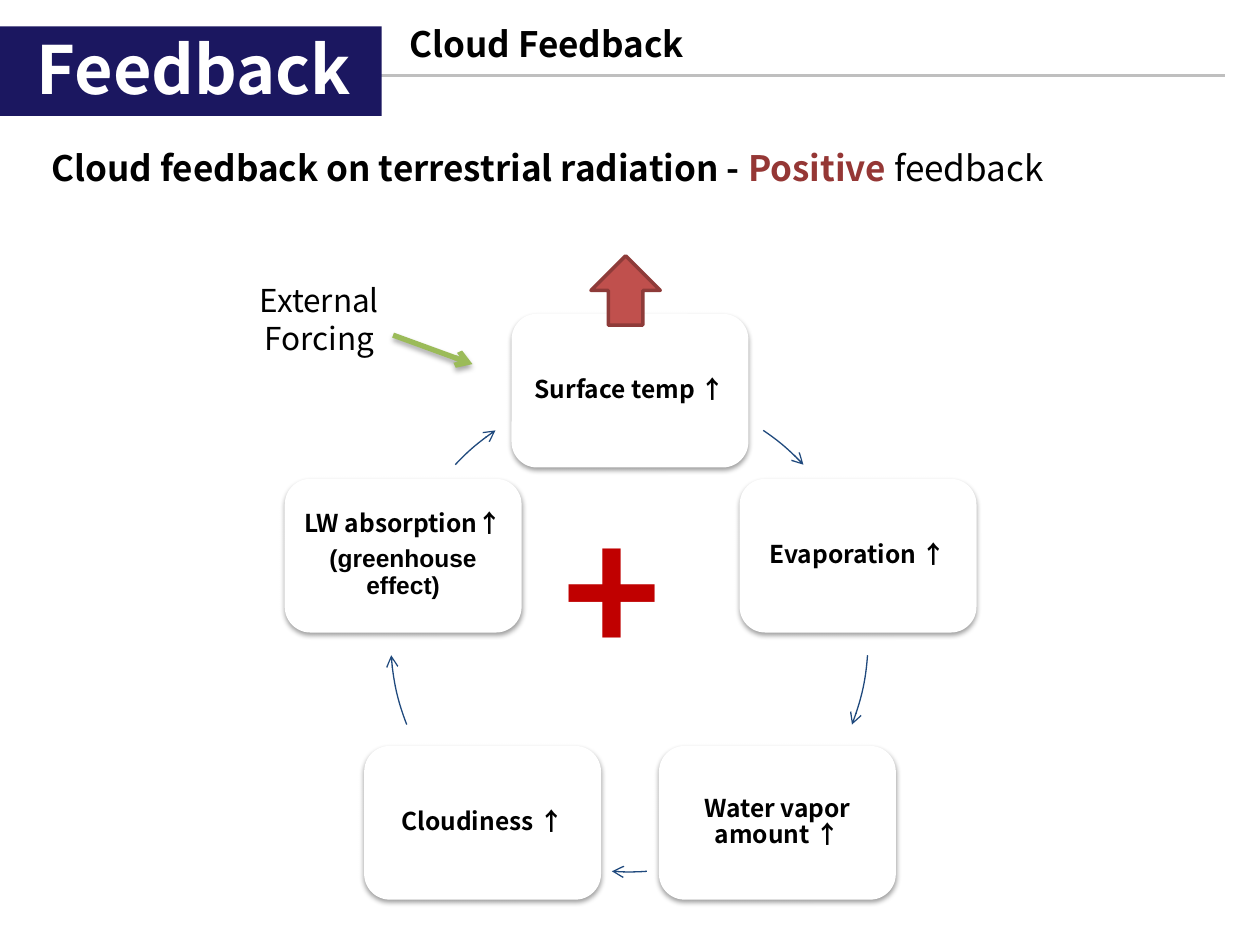
"""Build the cloud feedback cycle slide."""
from lxml.etree import SubElement
from pptx import Presentation
from pptx.dml.color import RGBColor
from pptx.enum.shapes import MSO_CONNECTOR, MSO_SHAPE
from pptx.enum.text import MSO_ANCHOR, PP_ALIGN
from pptx.oxml.ns import qn
from pptx.util import Inches, Pt

BLACK = RGBColor(0x00, 0x00, 0x00)
WHITE = RGBColor(0xFF, 0xFF, 0xFF)
NAVY = RGBColor(0x1B, 0x17, 0x60)
GREY = RGBColor(0xBF, 0xBF, 0xBF)
BLUE = RGBColor(0x1F, 0x49, 0x7D)
GREEN = RGBColor(0x9B, 0xBB, 0x59)
BRICK = RGBColor(0xC0, 0x50, 0x4D)
DARK_BRICK = RGBColor(0x8E, 0x3B, 0x39)
DARK_RED = RGBColor(0x95, 0x37, 0x35)
RED = RGBColor(0xC0, 0x00, 0x00)
FONT = "Noto Sans CJK KR"


class SlideBuilder:
    """Hold the text style and the current slide."""

    def __init__(self, page, font):
        self.page = page
        self.font = font

    def span(self, para, text, size, color=BLACK, bold=True, font=None):
        span = para.add_run()
        span.text = text
        span.font.size = Pt(size)
        span.font.bold = bold
        span.font.color.rgb = color
        span.font.name = font or self.font
        properties = span.font._element
        SubElement(properties, qn("a:ea"), typeface=font or self.font)
        return span

    def frame(self, box, margins=(0.1, 0.05), anchor=MSO_ANCHOR.TOP):
        frame = box.text_frame
        frame.word_wrap = True
        frame.vertical_anchor = anchor
        frame.margin_left = frame.margin_right = Inches(margins[0])
        frame.margin_top = frame.margin_bottom = Inches(margins[1])
        return frame

    def title(self, text, left, top, width, height):
        box = self.page.shapes.title
        box.left, box.top = Inches(left), Inches(top)
        box.width, box.height = Inches(width), Inches(height)
        para = self.frame(box).paragraphs[0]
        para.alignment = PP_ALIGN.LEFT
        self.span(para, text, 20)

    def text(self, lines, left, top, width, height, align=PP_ALIGN.LEFT):
        box = self.page.shapes.add_textbox(
            Inches(left), Inches(top), Inches(width), Inches(height))
        frame = self.frame(box)
        for index, spans in enumerate(lines):
            para = frame.paragraphs[0] if index == 0 else frame.add_paragraph()
            para.alignment = align
            for span in spans:
                self.span(para, *span)
        return box

    def shape(self, kind, left, top, width, height, fill=None, line=None, weight=1):
        shape = self.page.shapes.add_shape(
            kind, Inches(left), Inches(top), Inches(width), Inches(height))
        shape.shadow.inherit = False
        if fill is None:
            shape.fill.background()
        else:
            shape.fill.solid()
            shape.fill.fore_color.rgb = fill
        if line is None:
            shape.line.fill.background()
        else:
            shape.line.color.rgb = line
            shape.line.width = Pt(weight)
        return shape

    def shadow(self, effects, alpha, distance):
        outer = SubElement(
            effects, qn("a:outerShdw"), blurRad=str(Pt(3.1)),
            dist=str(Pt(distance)), dir="5400000", rotWithShape="0")
        color = SubElement(outer, qn("a:srgbClr"), val=str(BLACK))
        SubElement(color, qn("a:alpha"), val=str(alpha * 1000))

    def arrowhead(self, line_owner):
        outline = line_owner.line._get_or_add_ln()
        SubElement(outline, qn("a:tailEnd"), type="arrow")

    def node(self, lines, center_x, center_y, width=1.88, height=1.22):
        box = self.shape(
            MSO_SHAPE.ROUNDED_RECTANGLE, center_x - width / 2,
            center_y - height / 2, width, height, WHITE)
        self.shadow(box._element.spPr.find(qn("a:effectLst")), 38, 1.6)
        frame = self.frame(box, (0.06, 0.06), MSO_ANCHOR.MIDDLE)
        for index, (text, font) in enumerate(lines):
            para = frame.paragraphs[0] if index == 0 else frame.add_paragraph()
            para.alignment = PP_ALIGN.CENTER
            para.line_spacing = 0.9
            para.space_after = Pt(5)
            self.span(para, text, 14, font=font)

    def arc(self, start, end, top, left=3.1, diameter=3.79):
        arc = self.shape(
            MSO_SHAPE.ARC, left, top, diameter, diameter, line=BLUE, weight=0.75)
        for index, degrees in enumerate((start, end)):
            arc.adjustments[index] = (degrees - 90) % 360 * 0.6
        self.arrowhead(arc)

    def line(self, start, end, color, weight, arrow=False):
        line = self.page.shapes.add_connector(
            MSO_CONNECTOR.STRAIGHT, *(Inches(value) for value in start + end))
        line.line.color.rgb = color
        line.line.width = Pt(weight)
        effects = SubElement(line._element.spPr, qn("a:effectLst"))
        if arrow:
            self.arrowhead(line)
            self.shadow(effects, 35, 1.8)


def main():
    deck = Presentation()
    deck.slide_width, deck.slide_height = Inches(10), Inches(7.5)
    builder = SlideBuilder(deck.slides.add_slide(deck.slide_layouts[5]), FONT)

    builder.line((2.64, 0.6), (9.72, 0.6), GREY, 1.5)
    builder.title("Cloud Feedback", 3.15, 0.13, 6.14, 0.43)
    builder.shape(MSO_SHAPE.RECTANGLE, 0, 0.21, 3.03, 0.71, NAVY)
    builder.text([[("Feedback", 38, WHITE)]], 0.14, 0.17, 2.8, 0.73, PP_ALIGN.CENTER)
    builder.text([[
        ("Cloud feedback on terrestrial radiation - ", 20),
        ("Positive", 20, DARK_RED),
        (" feedback", 20, BLACK, False),
    ]], 0.31, 1.11, 9.45, 0.44)

    nodes = [
        ([("Surface temp ↑", FONT)], 5, 3.1),
        ([("Evaporation ↑", FONT)], 6.81, 4.41),
        ([("Water vapor amount ↑", FONT)], 6.17, 6.53),
        ([("Cloudiness ↑", FONT)], 3.83, 6.53),
        ([("LW absorption↑", FONT), ("(greenhouse effect)", "Arial")], 3.2, 4.41),
    ]
    arcs = [
        (34.1, 46.8, 3.09),
        (94.1, 111.2, 3.17),
        (175.8, 184.2, 3.13),
        (248.8, 265.9, 3.17),
        (313.2, 325.9, 3.09),
    ]
    for node, arc in zip(nodes, arcs):
        builder.node(*node)
        builder.arc(*arc)

    builder.shape(MSO_SHAPE.UP_ARROW, 4.69, 2.03, 0.55, 0.55, BRICK, DARK_BRICK, 2)
    plus = builder.text([[("+", 96, RED)]], 4.37, 3.83, 1.17, 1.72)
    properties = plus.text_frame.paragraphs[0].runs[0].font._element
    outline = SubElement(properties, qn("a:ln"), w=str(Pt(6)))
    properties.insert(0, outline)
    fill = SubElement(outline, qn("a:solidFill"))
    SubElement(fill, qn("a:srgbClr"), val=str(RED))

    builder.text(
        [[("External", 18, BLACK, False)], [("Forcing", 18, BLACK, False)]],
        1.95, 2.18, 1.17, 0.71, PP_ALIGN.CENTER)
    builder.line((3.12, 2.66), (3.75, 2.89), GREEN, 3, arrow=True)
    deck.save("out.pptx")


if __name__ == "__main__":
    main()
